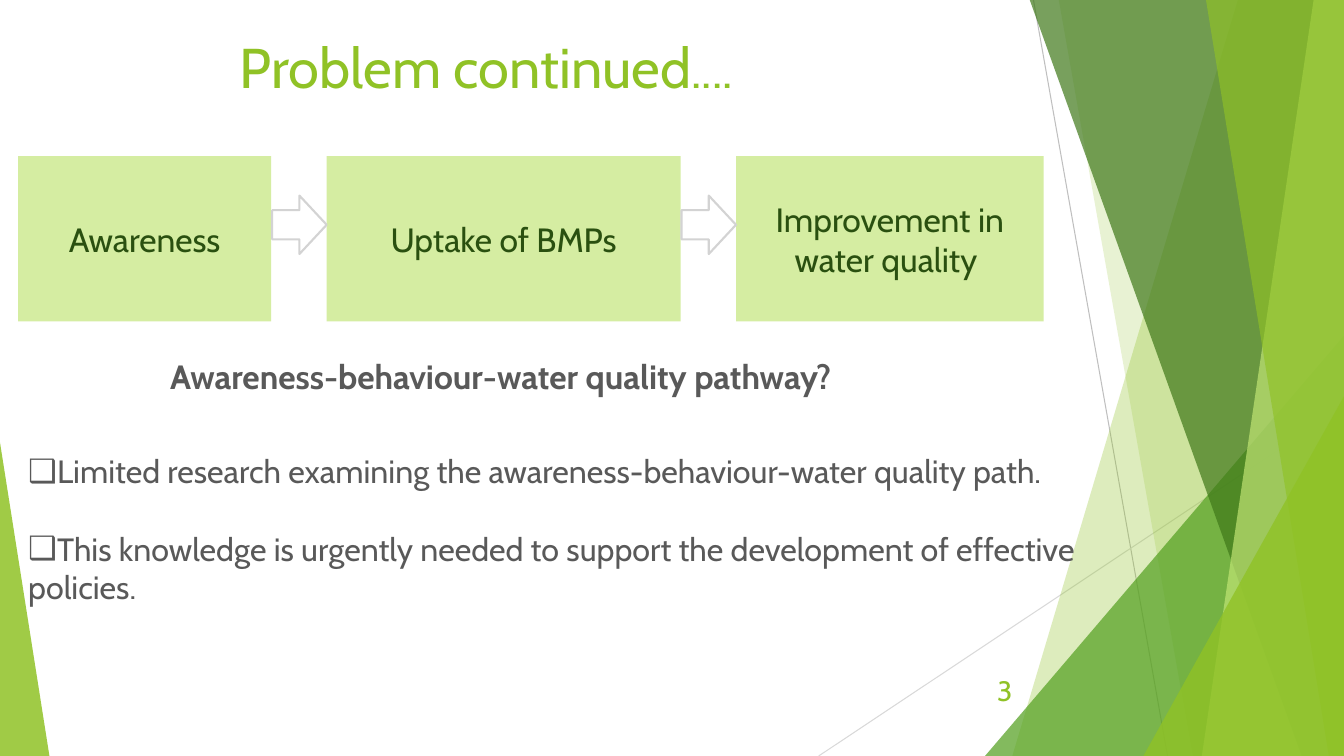
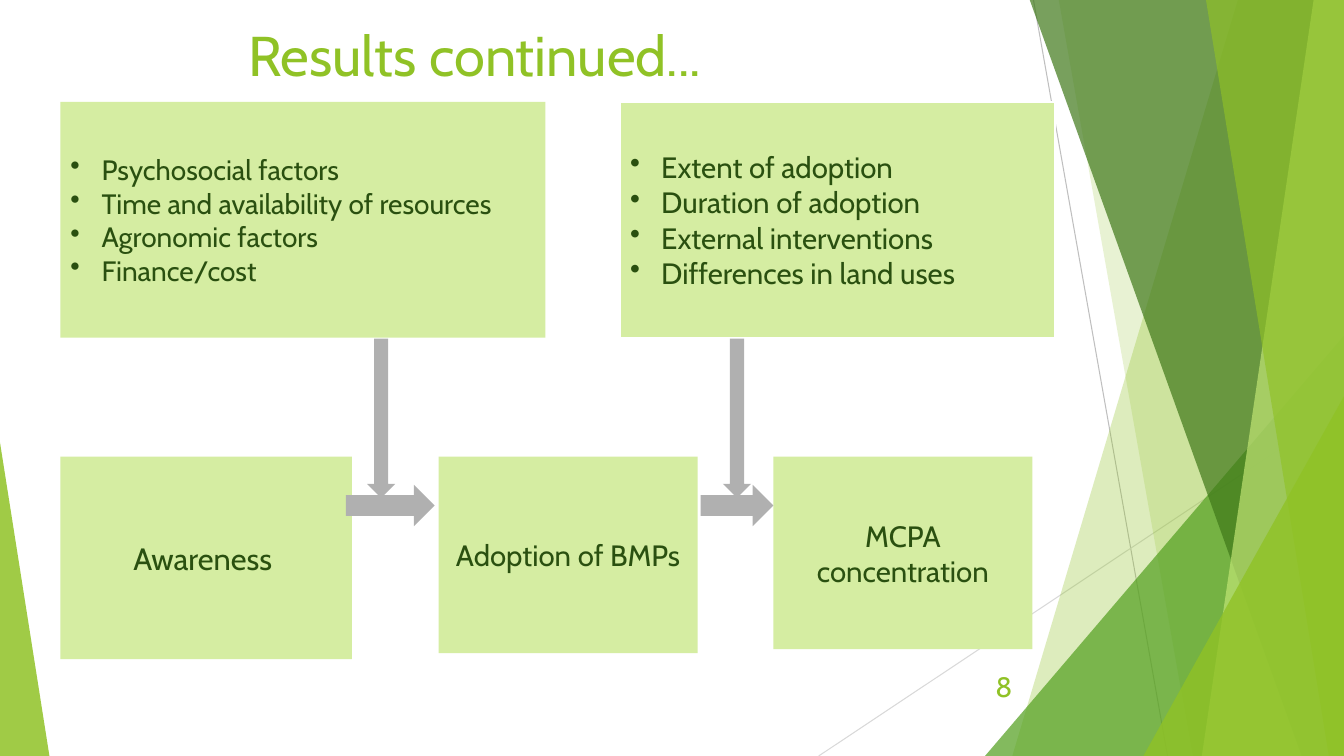
from dataclasses import dataclass
from typing import NamedTuple, Optional, Sequence

from lxml import etree
from pptx import Presentation
from pptx import util as u
from pptx.dml.color import RGBColor
from pptx.enum import shapes, text
from pptx.oxml import ns

PX = 9144  # EMU per px, 100 px to the inch
WIDTH, HEIGHT = 1333, 750
FONT = "Cabin"

LEAF = RGBColor(0x90, 0xC2, 0x26)
GRASS = RGBColor(0x54, 0xA0, 0x21)
FOREST = RGBColor(0x3F, 0x78, 0x19)
LIME = RGBColor(0xC0, 0xE4, 0x74)
PALE = RGBColor(0xD5, 0xED, 0xA2)
INK = RGBColor(0x2A, 0x50, 0x10)
BODY = RGBColor(0x59, 0x59, 0x59)
WHITE = RGBColor(0xFF, 0xFF, 0xFF)
ARROW = RGBColor(0xB0, 0xB0, 0xB0)
OUTLINE = RGBColor(0xD3, 0xD3, 0xD3)
RULE_DARK = RGBColor(0xBF, 0xBF, 0xBF)
RULE_LIGHT = RGBColor(0xD9, 0xD9, 0xD9)

AUTO = shapes.MSO_SHAPE
ALIGN = text.PP_ALIGN
ANCHOR = text.MSO_ANCHOR


class Box(NamedTuple):
    left: int
    top: int
    width: int
    height: int

    def emu(self) -> list[u.Emu]:
        return [u.Emu(length * PX) for length in self]


@dataclass(frozen=True)
class Band:
    """A full-height area between a slanted edge and the right side."""
    top_x: int
    bottom_x: int
    color: RGBColor
    opacity: int


@dataclass(frozen=True)
class Corner:
    """A triangle on the bottom edge, its peak at the left (0) or right (1)."""
    box: Box
    peak: int
    color: RGBColor
    opacity: int


@dataclass(frozen=True)
class Rule:
    start: tuple[int, int]
    end: tuple[int, int]
    color: RGBColor


@dataclass(frozen=True)
class Card:
    box: Box
    lines: Sequence[str]
    size: int
    align: ALIGN = ALIGN.CENTER
    bullet: str = ""
    outline: Optional[RGBColor] = None


DECORATION = (
    Rule((1025, 0), (1158, 750), RULE_DARK),
    Rule((1333, 403), (812, 750), RULE_LIGHT),
    Band(1228, 1004, LEAF, 30),
    Band(1050, 1183, LEAF, 20),
    Corner(Box(977, 333, 356, 417), 1, GRASS, 72),
    Band(1021, 1291, FOREST, 70),
    Band(1303, 1192, LIME, 70),
    Band(1196, 1318, LEAF, 65),
    Corner(Box(1134, 393, 199, 357), 1, LEAF, 80),
    Corner(Box(0, 439, 49, 311), 0, LEAF, 85),
)


def paint(shape, fill: Optional[RGBColor], outline: Optional[RGBColor] = None,
          opacity: int = 100) -> None:
    shape.shadow.inherit = False
    if fill is None:
        shape.fill.background()
    else:
        shape.fill.solid()
        shape.fill.fore_color.rgb = fill
    if opacity < 100:
        color = next(shape.element.iter(ns.qn("a:srgbClr")))
        etree.SubElement(color, ns.qn("a:alpha"), val=str(opacity * 1000))
    if outline is None:
        shape.line.fill.background()
    else:
        shape.line.color.rgb = outline
        shape.line.width = u.Pt(1.5)


def add_span(para, words: str, size: int, color: RGBColor, bold: bool = False) -> None:
    span = para.add_run()
    span.text = words
    span.font.name = FONT
    span.font.size = u.Pt(size)
    span.font.bold = bold
    span.font.color.rgb = color


def write(frame, lines: Sequence[str], *, size: int, color: RGBColor,
          align: ALIGN = ALIGN.LEFT, anchor: ANCHOR = ANCHOR.MIDDLE,
          bold: bool = False, bullet: str = "", indent: int = 0,
          gap: float = 0, spacing: float = 1.0) -> None:
    """Fill a text frame, one paragraph a line, with gap points between them."""
    frame.word_wrap = True
    frame.auto_size = text.MSO_AUTO_SIZE.NONE
    frame.vertical_anchor = anchor
    for index, line in enumerate(lines):
        para = frame.add_paragraph() if index else frame.paragraphs[0]
        para.alignment = align
        para.line_spacing = spacing
        para.space_before = u.Pt(gap if index else 0)
        add_span(para, line, size, color, bold)
        if bullet:
            props = para._p.get_or_add_pPr()
            props.set("marL", str(indent * PX))
            props.set("indent", str(-indent * PX))
            etree.SubElement(props, ns.qn("a:buChar"), char=bullet)


def place(shape, box: Box) -> None:
    shape.left, shape.top, shape.width, shape.height = box.emu()


def add_title(page, box: Box, words: str) -> None:
    place(page.shapes.title, box)
    write(page.shapes.title.text_frame, [words], size=40, color=LEAF,
          anchor=ANCHOR.TOP)


def add_text(page, box: Box, words: str, **style) -> None:
    write(page.shapes.add_textbox(*box.emu()).text_frame, [words], **style)


def add_page_number(page, number: int, top: int) -> None:
    add_text(page, Box(939, top, 75, 40), str(number), size=20, color=LEAF,
             align=ALIGN.RIGHT)


def add_card(page, card: Card) -> None:
    shape = page.shapes.add_shape(AUTO.RECTANGLE, *card.box.emu())
    paint(shape, PALE, card.outline)
    write(shape.text_frame, card.lines, size=card.size, color=INK,
          align=card.align, bullet=card.bullet, indent=31)


def add_arrow(page, kind: AUTO, box: Box, fill: Optional[RGBColor],
              outline: Optional[RGBColor] = None) -> None:
    paint(page.shapes.add_shape(kind, *box.emu()), fill, outline)


def draw_rule(group, rule: Rule) -> None:
    ends = [u.Emu(length * PX) for length in (*rule.start, *rule.end)]
    line = group.shapes.add_connector(shapes.MSO_CONNECTOR.STRAIGHT, *ends)
    line.line.color.rgb = rule.color
    line.line.width = u.Pt(0.75)
    etree.SubElement(line.element.spPr, ns.qn("a:effectLst"))


def draw_band(group, band: Band) -> None:
    outline = group.shapes.build_freeform(band.top_x, -1, scale=PX)
    outline.add_line_segments(
        [(WIDTH, -1), (WIDTH, HEIGHT), (band.bottom_x, HEIGHT)], close=True)
    paint(outline.convert_to_shape(), band.color, opacity=band.opacity)


def draw_corner(group, corner: Corner) -> None:
    shape = group.shapes.add_shape(AUTO.ISOSCELES_TRIANGLE, *corner.box.emu())
    shape.adjustments[0] = corner.peak
    paint(shape, corner.color, opacity=corner.opacity)


def decorate_master(deck, page) -> None:
    """Draw the shared decoration on a page and move it to the slide master."""
    group = page.shapes.add_group_shape()
    draw = {Rule: draw_rule, Band: draw_band, Corner: draw_corner}
    for item in DECORATION:
        draw[type(item)](group, item)
    deck.slide_master.shapes.element.insert(2, group.element)


def build_problem(page) -> None:
    add_title(page, Box(228, 27, 632, 77), "Problem continued")
    add_span(page.shapes.title.text_frame.paragraphs[0], "....", 36, LEAF)
    add_page_number(page, 3, 665)

    steps = (("Awareness", 18, 251), ("Uptake of BMPs", 324, 351),
             ("Improvement in water quality ", 730, 305))
    for words, left, width in steps:
        add_card(page, Card(Box(left, 155, width, 164), [words], 24))
    for left, fill in ((270, None), (676, WHITE)):
        add_arrow(page, AUTO.RIGHT_ARROW, Box(left, 194, 54, 58), fill, OUTLINE)

    add_text(page, Box(159, 336, 864, 80),
             "Awareness-behaviour-water quality pathway?",
             size=24, color=BODY, bold=True, spacing=0.9)
    body = page.placeholders[1]
    place(body, Box(18, 443, 1113, 165))
    write(body.text_frame, [
        "Limited research examining the awareness-behaviour-water quality path.",
        "This knowledge is urgently needed to support the development of "
        "effective policies.",
    ], size=23, color=BODY, anchor=ANCHOR.TOP, bullet="❑", gap=27.6)


def build_results(page) -> None:
    add_title(page, Box(236, 15, 713, 71), "Results continued...")
    add_page_number(page, 8, 661)

    cards = (
        Card(Box(435, 453, 257, 195), ["Adoption of BMPs"], 21),
        Card(Box(60, 453, 289, 201), ["Awareness "], 22),
        Card(Box(767, 453, 257, 191), ["MCPA concentration"], 21),
        Card(Box(615, 101, 431, 234),
             ["Extent of adoption ", "Duration of adoption ",
              "External interventions", "Differences in land uses"],
             21, ALIGN.JUSTIFY, "•", WHITE),
        Card(Box(60, 101, 481, 234),
             ["Psychosocial factors", "Time and availability of resources",
              "Agronomic factors", "Finance/cost"],
             20, ALIGN.LEFT, "•"),
    )
    for card in cards:
        add_card(page, card)
    for left, width in ((343, 88), (695, 72)):
        add_arrow(page, AUTO.RIGHT_ARROW, Box(left, 481, width, 41), ARROW)
    for left in (364, 717):
        add_arrow(page, AUTO.DOWN_ARROW, Box(left, 336, 28, 158), ARROW)


def main() -> None:
    deck = Presentation()
    deck.slide_width, deck.slide_height = u.Emu(WIDTH * PX), u.Emu(HEIGHT * PX)
    title_and_content, title_only = deck.slide_layouts[1], deck.slide_layouts[5]
    problem = deck.slides.add_slide(title_and_content)
    decorate_master(deck, problem)
    build_problem(problem)
    build_results(deck.slides.add_slide(title_only))
    deck.save("out.pptx")


if __name__ == "__main__":
    main()
